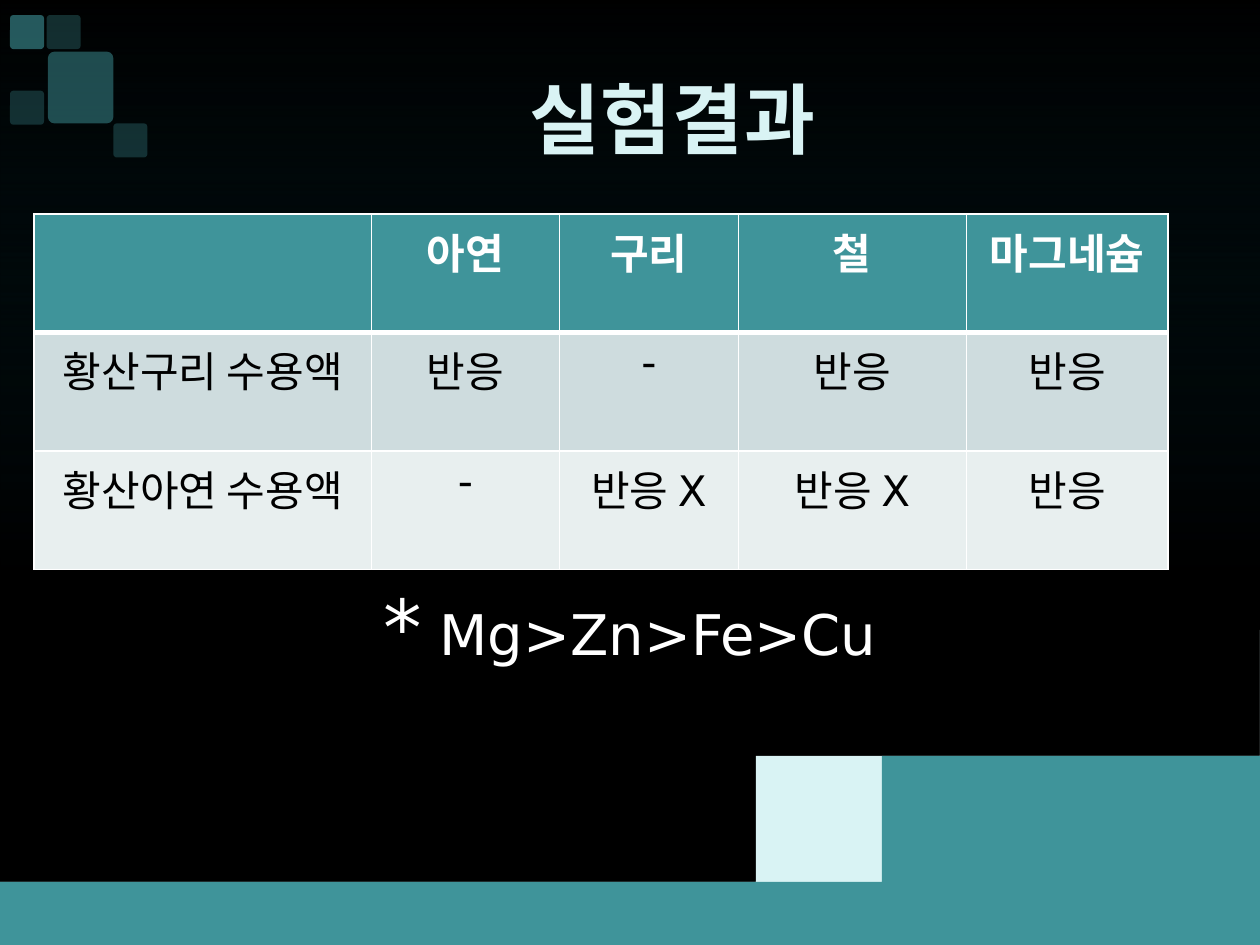
from lxml import etree
from pptx import Presentation
from pptx.dml.color import RGBColor
from pptx.enum.shapes import MSO_SHAPE
from pptx.enum.text import MSO_ANCHOR, PP_ALIGN
from pptx.oxml.ns import qn
from pptx.util import Inches, Pt

CENTER = PP_ALIGN.CENTER
MIDDLE = MSO_ANCHOR.MIDDLE
RECT = MSO_SHAPE.RECTANGLE
ROUNDED = MSO_SHAPE.ROUNDED_RECTANGLE
COLORS = {
    "black": "000000", "white": "FFFFFF", "deep": "005466",
    "teal": "3F949A", "pale": "D9F3F4", "mist": "CFE8E9", "gray": "A1B4B5",
    "band1": "CEDCDE", "band2": "E8EFEF",
}
RGB = {name: RGBColor.from_string(value) for name, value in COLORS.items()}


def gradient(stops):
    """Vertical gradFill element from (position %, colour, opacity %) stops."""
    grad = etree.Element(qn("a:gradFill"), rotWithShape="1")
    gs_list = etree.SubElement(grad, qn("a:gsLst"))
    for pos, color, opacity in stops:
        gs = etree.SubElement(gs_list, qn("a:gs"), pos=str(pos * 1000))
        clr = etree.SubElement(gs, qn("a:srgbClr"), val=COLORS[color])
        if opacity < 100:
            etree.SubElement(clr, qn("a:alpha"), val=str(opacity * 1000))
    etree.SubElement(grad, qn("a:lin"), ang="5400000", scaled="0")
    return grad


def add_run(p, text, size, font, color, bold=False):
    r = p.add_run()
    r.text = text
    r.font.size = Pt(size)
    r.font.name = font
    r.font.bold = bold
    r.font.color.rgb = RGB[color]
    return r


prs = Presentation()
prs.slide_width, prs.slide_height = Inches(10), Inches(7.5)
s = prs.slides.add_slide(prs.slide_layouts[6])

# Background with a faint teal glow
s.background.fill.solid()
s.background.fill.fore_color.rgb = RGB["black"]
sp = s.shapes.add_shape(RECT, 0, 0, prs.slide_width, prs.slide_height)
sp.shadow.inherit = False
sp.line.fill.background()
sp.fill.background()
no_fill = sp._element.spPr.find(qn("a:noFill"))
no_fill.getparent().replace(no_fill, gradient([(0, "deep", 0), (61, "black", 40)]))

# Waves: Bezier segments sampled as points, closed along the bottom edge
STEPS = 40
waves = [
    ("pale", [[(0, 6.78), (1.61, 6.85), (2.93, 6.82), (5.21, 6.59)],
              [(5.21, 6.59), (7.49, 6.36), (9.48, 5.59), (10, 5.4)]]),
    ("teal", [[(0, 6.91), (2.46, 6.99), (4.45, 6.86), (6.15, 6.68)],
              [(6.15, 6.68), (7.84, 6.49), (9.59, 5.99), (10, 5.86)]]),
]
for color, segments in waves:
    points = []
    for curve in segments:
        for i in range(1, STEPS + 1):
            t = i / STEPS
            weights = ((1 - t) ** 3, 3 * t * (1 - t) ** 2, 3 * t * t * (1 - t), t ** 3)
            points.append([sum(w * pt[axis] for w, pt in zip(weights, curve))
                           for axis in (0, 1)])
    fb = s.shapes.build_freeform(*segments[0][0], scale=Inches(1))
    fb.add_line_segments(points + [(10, 7.5), (0, 7.5)], close=True)
    sp = fb.convert_to_shape()
    sp.shadow.inherit = False
    sp.fill.solid()
    sp.fill.fore_color.rgb = RGB[color]
    sp.line.fill.background()

# Corner tiles: left, top, width, height, opacity
tiles = [(0.37, 0.12, 0.27, 0.27, 30), (0.08, 0.72, 0.27, 0.27, 30),
         (0.08, 0.12, 0.27, 0.27, 60), (0.9, 0.98, 0.27, 0.27, 30),
         (0.38, 0.41, 0.52, 0.57, 50)]
for *box, opacity in tiles:
    sp = s.shapes.add_shape(ROUNDED, *[Inches(v) for v in box])
    sp.adjustments[0] = 0.1
    sp.shadow.inherit = False
    sp.line.fill.background()
    sp.fill.solid()
    sp.fill.fore_color.rgb = RGB["teal"]
    clr = sp._element.spPr.find(".//" + qn("a:srgbClr"))
    etree.SubElement(clr, qn("a:alpha"), val=str(opacity * 1000))

# Results table
rows = [["", "아연", "구리", "철", "마그네슘"],
        ["황산구리 수용액", "반응", "-", "반응", "반응"],
        ["황산아연 수용액", "-", "반응 X", "반응 X", "반응"]]
row_styles = [("teal", "white", True), ("band1", "black", False), ("band2", "black", False)]
col_widths = [2.68, 1.49, 1.42, 1.81, 1.6]
table = s.shapes.add_table(len(rows), len(col_widths), Inches(0.27), Inches(1.7),
                           Inches(9), Inches(2.83)).table
for col, width in zip(table.columns, col_widths):
    col.width = Inches(width)
for i, (texts, (fill, color, bold)) in enumerate(zip(rows, row_styles)):
    table.rows[i].height = Inches(0.94)
    # The rule below the header is thicker than the others
    borders = {"L": 1, "R": 1, "T": 3 if i == 1 else 1, "B": 3 if i == 0 else 1}
    for j, text in enumerate(texts):
        cell = table.cell(i, j)
        cell.fill.solid()
        cell.fill.fore_color.rgb = RGB[fill]
        tcPr = cell._tc.get_or_add_tcPr()
        for k, (side, width) in enumerate(borders.items()):
            ln = etree.Element(qn("a:ln" + side), w=str(Pt(width)))
            solid = etree.SubElement(ln, qn("a:solidFill"))
            etree.SubElement(solid, qn("a:srgbClr"), val=COLORS["white"])
            tcPr.insert(k, ln)
        p = cell.text_frame.paragraphs[0]
        p.alignment = CENTER
        if text:
            add_run(p, text, 24, "DejaVu Sans", color, bold)

# Title
tf = s.shapes.add_textbox(Inches(1.25), Inches(0.39), Inches(8.17), Inches(1.09)).text_frame
tf.word_wrap = True
tf.vertical_anchor = MIDDLE
p = tf.paragraphs[0]
p.alignment = CENTER
r = add_run(p, "실험결과", 44, "Cambria", "pale", True)
rPr = r._r.get_or_add_rPr()
rPr.set("spc", "50")
rPr.replace(rPr.find(qn("a:solidFill")), gradient([
    (0, "pale", 100), (26, "pale", 100), (41, "mist", 100),
    (67, "gray", 100), (95, "pale", 100)]))

# Reactivity order
tf = s.shapes.add_textbox(Inches(0.5), Inches(4.54), Inches(9), Inches(2.16)).text_frame
tf.word_wrap = True
p = tf.paragraphs[0]
p.alignment = CENTER
pPr = p._p.get_or_add_pPr()
pPr.set("marL", str(Inches(0.38)))
pPr.set("indent", str(Inches(-0.38)))
space = etree.SubElement(pPr, qn("a:spcBef"))
etree.SubElement(space, qn("a:spcPct"), val="20000")
add_run(p, "*", 44, "DejaVu Sans", "white")
add_run(p, " Mg>Zn>Fe>Cu", 32, "DejaVu Sans", "white")

prs.save("out.pptx")
